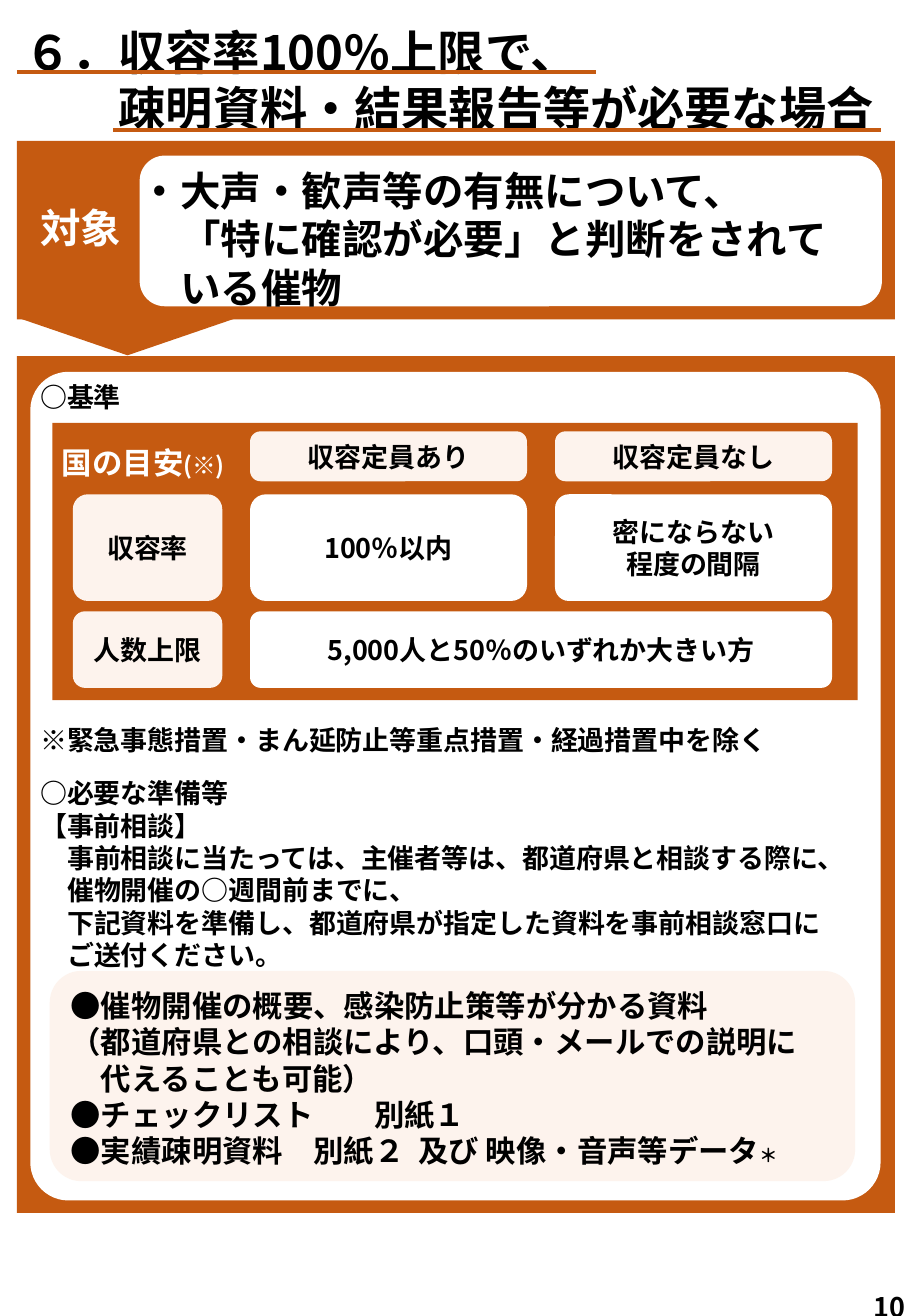
from dataclasses import dataclass

from lxml.etree import SubElement
from pptx import Presentation
from pptx.dml.color import RGBColor
from pptx.enum.shapes import MSO_CONNECTOR, MSO_SHAPE
from pptx.enum.text import MSO_ANCHOR, MSO_AUTO_SIZE, PP_ALIGN
from pptx.oxml.ns import qn
from pptx.util import Pt


@dataclass(frozen=True)
class Theme:
    font: str = "Noto Sans CJK JP"
    accent: str = "C55A11"
    tint: str = "FDF3ED"
    white: str = "FFFFFF"
    black: str = "000000"
    title: int = 28
    target: int = 24
    item: int = 18
    body: int = 16
    note: int = 14
    mark: int = 11
    leading: float = 1.2


THEME = Theme()


def add_span(para, text, size, color):
    span = para.add_run()
    span.text = text
    span.font.size = Pt(size)
    span.font.bold = True
    span.font.color.rgb = RGBColor.from_string(color)
    span.font.name = THEME.font
    SubElement(span.font._element, qn("a:ea"), typeface=THEME.font)


def write_text(frame, lines, size=THEME.body, color=THEME.black, align=PP_ALIGN.LEFT,
               anchor=MSO_ANCHOR.TOP, margins=(0, 0), tail=None, tab=None):
    """Each line is a text or a pair of text and indent in ems; tail is a text and its size."""
    frame.word_wrap = True
    frame.auto_size = MSO_AUTO_SIZE.NONE
    frame.vertical_anchor = anchor
    frame.margin_left = frame.margin_right = Pt(margins[0])
    frame.margin_top = frame.margin_bottom = Pt(margins[1])
    for number, line in enumerate(lines):
        text, indent = (line, 0) if isinstance(line, str) else line
        para = frame.add_paragraph() if number else frame.paragraphs[0]
        para.alignment = align
        para.line_spacing = Pt(size * THEME.leading)
        para.space_before = para.space_after = Pt(0)
        properties = para._p.get_or_add_pPr()
        properties.set("marL", str(Pt(indent * size)))
        properties.set("indent", "0")
        if tab:
            stops = SubElement(properties, qn("a:tabLst"))
            SubElement(stops, qn("a:tab"), pos=str(Pt(tab)), algn="l")
        add_span(para, text, size, color)
    if tail:
        add_span(para, *tail, color)


def add_text(page, left, top, width, height, lines, **style):
    box = page.shapes.add_textbox(Pt(left), Pt(top), Pt(width), Pt(height))
    write_text(box.text_frame, lines, **style)


def add_panel(page, left, top, width, height, fill, kind=MSO_SHAPE.RECTANGLE, corner=None):
    panel = page.shapes.add_shape(kind, Pt(left), Pt(top), Pt(width), Pt(height))
    panel.shadow.inherit = False
    panel.fill.solid()
    panel.fill.fore_color.rgb = RGBColor.from_string(fill)
    panel.line.fill.background()
    if corner is not None:
        panel.adjustments[0] = corner
    return panel


def add_round(page, left, top, width, height, fill, corner):
    return add_panel(page, left, top, width, height, fill, MSO_SHAPE.ROUNDED_RECTANGLE, corner)


def add_rule(page, left, right, y):
    rule = page.shapes.add_connector(MSO_CONNECTOR.STRAIGHT, Pt(left), Pt(y), Pt(right), Pt(y))
    rule.line.color.rgb = RGBColor.from_string(THEME.accent)
    rule.line.width = Pt(2.25)
    SubElement(rule._element.spPr, qn("a:effectLst"))


def add_title(page):
    title = page.shapes.title
    title.left, title.top, title.width, title.height = Pt(14.4), Pt(13.6), Pt(520), Pt(68)
    write_text(title.text_frame,
               ["６．収容率100％上限で、", ("疎明資料・結果報告等が必要な場合", 2)],
               size=THEME.title)
    add_rule(page, 10, 353, 42.5)
    add_rule(page, 67, 522, 77)


def add_target(page):
    arrow = add_panel(page, 53.3, 123.1, 44.6, 130.3, THEME.accent, MSO_SHAPE.PENTAGON)
    arrow.rotation = 90
    add_panel(page, 10, 83.5, 520.5, 105.8, THEME.accent)
    add_round(page, 82.8, 92.2, 440, 89.3, THEME.white, 0.167)
    add_text(page, 23.8, 120.1, 56, 30, ["対象"], size=THEME.target, color=THEME.white)
    add_text(page, 82.8, 98.2, 440, 88,
             ["・大声・歓声等の有無について、",
              ("「特に確認が必要」と判断をされて", 1),
              ("いる催物", 1)], size=THEME.target)


def add_criteria(page):
    add_panel(page, 31, 250.6, 477.4, 164.2, THEME.accent)
    add_text(page, 36.7, 263.3, 110, 24, ["国の目安"], size=THEME.item,
             color=THEME.white, tail=("(※)", THEME.note))

    # Column and row bands as (start, length)
    label, seated, unseated = (43.2, 88.6), (148.2, 164.2), (329, 164.2)
    both = (seated[0], unseated[0] + unseated[1] - seated[0])
    header, rate, limit = (255.6, 29.6), (292.9, 63.2), (362.2, 45.4)
    cells = [
        (seated, header, THEME.tint, 0.21, ["収容定員あり"]),
        (unseated, header, THEME.tint, 0.21, ["収容定員なし"]),
        (label, rate, THEME.tint, 0.14, ["収容率"]),
        (label, limit, THEME.tint, 0.16, ["人数上限"]),
        (seated, rate, THEME.white, 0.15, ["100％以内"]),
        (unseated, rate, THEME.white, 0.13, ["密にならない", "程度の間隔"]),
        (both, limit, THEME.white, 0.14, ["5,000人と50％のいずれか大きい方"]),
    ]
    for (left, width), (top, height), fill, corner, lines in cells:
        cell = add_round(page, left, top, width, height, fill, corner)
        write_text(cell.text_frame, lines, align=PP_ALIGN.CENTER,
                   anchor=MSO_ANCHOR.MIDDLE, margins=(5, 3))


def add_preparation(page):
    add_text(page, 23.8, 428.8, 500, 20,
             ["※緊急事態措置・まん延防止等重点措置・経過措置中を除く"])
    add_text(page, 23.8, 460.2, 500, 116,
             ["○必要な準備等",
              "【事前相談】",
              ("事前相談に当たっては、主催者等は、都道府県と相談する際に、", 1),
              ("催物開催の○週間前までに、", 1),
              ("下記資料を準備し、都道府県が指定した資料を事前相談窓口に", 1),
              ("ご送付ください。", 1)])
    add_round(page, 29.5, 575.3, 477.4, 124.6, THEME.tint, 0.15)
    add_text(page, 41.8, 584.7, 475, 108,
             ["●催物開催の概要、感染防止策等が分かる資料",
              "（都道府県との相談により、口頭・メールでの説明に",
              ("代えることも可能）", 1),
              "●チェックリスト\t別紙１",
              "●実績疎明資料\t別紙２  及び 映像・音声等データ"],
             size=THEME.item, tab=180, tail=("＊", THEME.mark))


def main():
    deck = Presentation()
    deck.slide_width, deck.slide_height = Pt(540), Pt(779.76)
    page = deck.slides.add_slide(deck.slide_layouts[5])

    # Heading and target events
    add_title(page)
    add_target(page)

    # Main panel
    add_panel(page, 10, 211, 520.5, 507.6, THEME.accent)
    add_round(page, 18, 220.3, 504, 491, THEME.white, 0.046)
    add_text(page, 23.8, 225.7, 200, 20, ["○基準"])
    add_criteria(page)
    add_preparation(page)

    # Page number
    add_text(page, 517.6, 764.7, 22, 15, ["10"])
    deck.save("out.pptx")


if __name__ == "__main__":
    main()
